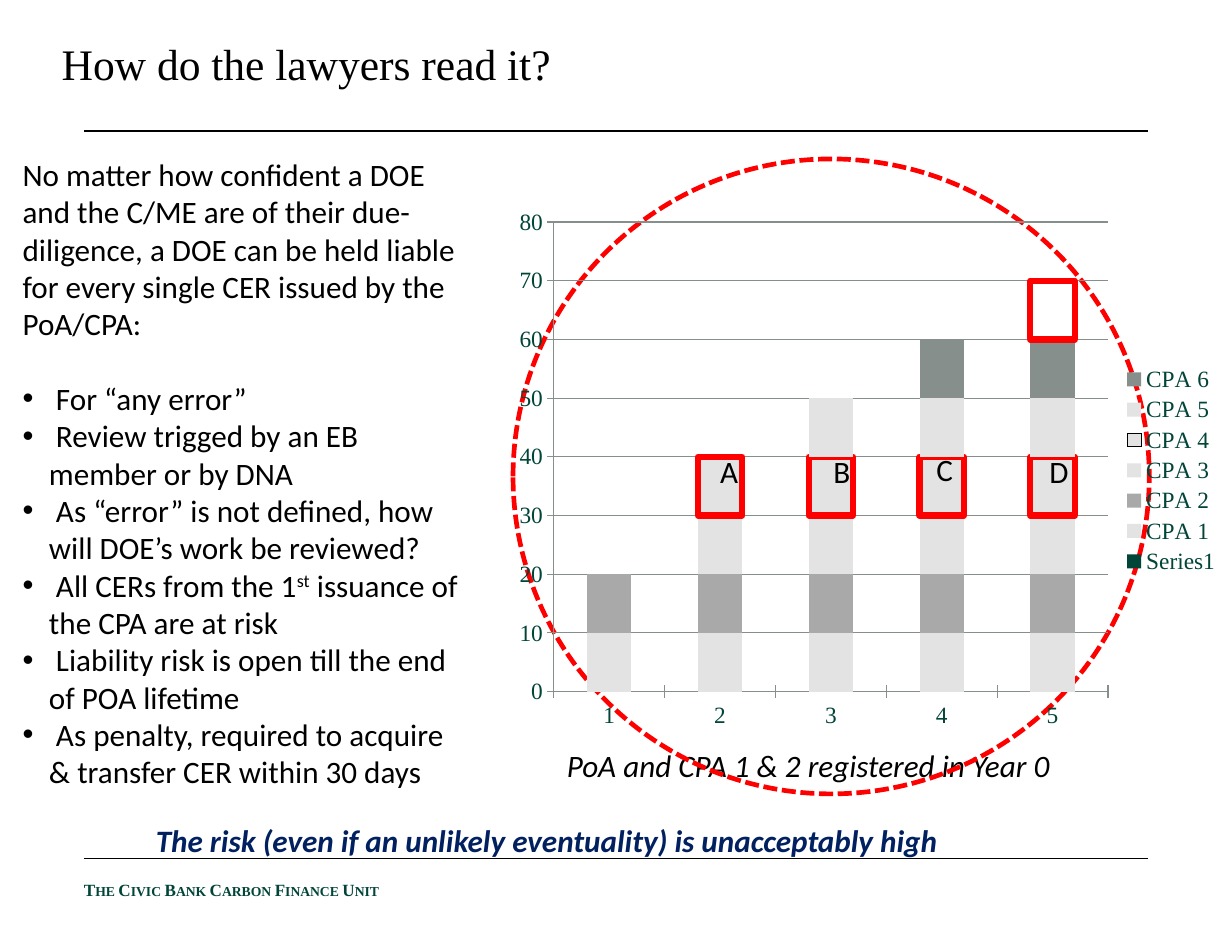
from lxml import etree
from pptx import Presentation
from pptx.chart.data import CategoryChartData
from pptx.dml.color import RGBColor
from pptx.enum.chart import XL_CHART_TYPE, XL_LEGEND_POSITION, XL_TICK_MARK
from pptx.enum.dml import MSO_LINE
from pptx.enum.shapes import MSO_CONNECTOR, MSO_SHAPE
from pptx.enum.text import MSO_ANCHOR, MSO_AUTO_SIZE, PP_ALIGN
from pptx.oxml import parse_xml
from pptx.oxml.ns import nsdecls, qn
from pptx.util import Pt

STACKED = XL_CHART_TYPE.COLUMN_STACKED
RIGHT = XL_LEGEND_POSITION.RIGHT
CROSS = XL_TICK_MARK.CROSS
DASH = MSO_LINE.SQUARE_DOT
STRAIGHT = MSO_CONNECTOR.STRAIGHT
OVAL = MSO_SHAPE.OVAL
TOP, MIDDLE, BOTTOM = MSO_ANCHOR.TOP, MSO_ANCHOR.MIDDLE, MSO_ANCHOR.BOTTOM
NO_FIT = MSO_AUTO_SIZE.NONE
LEFT = PP_ALIGN.LEFT

BLACK = RGBColor(0, 0, 0)
WHITE = RGBColor(255, 255, 255)
RED = RGBColor(255, 0, 0)
NAVY = RGBColor(0x00, 0x20, 0x60)
GREEN = RGBColor(0x00, 0x45, 0x38)
PALE = RGBColor(0xE3, 0xE3, 0xE3)
GREY = RGBColor(0xA9, 0xA9, 0xA9)
SAGE = RGBColor(0x86, 0x8F, 0x8B)

SERIF = {"name": "Times New Roman"}
SANS = {"name": "Calibri", "size": Pt(20)}
INSET = (8, 4, 8, 4)
HANG = 17

INTRO = ("No matter how confident a DOE and the C/ME are of their due-diligence, "
         "a DOE can be held liable for every single CER issued by the PoA/CPA:")
RISKS = [
    " For “any error”",
    " Review trigged by an EB member or by DNA",
    " As “error” is not defined, how will DOE’s work be reviewed?",
    " All CERs from the 1^st^ issuance of the CPA are at risk",
    " Liability risk is open till the end of POA lifetime",
    " As penalty, required to acquire & transfer CER within 30 days",
]
YEARS = ["1", "2", "3", "4", "5"]
STACKS = [
    ("Series1", 5, GREEN),
    ("CPA 1", 0, PALE),
    ("CPA 2", 0, GREY),
    ("CPA 3", 1, PALE),
    ("CPA 4", 1, PALE),
    ("CPA 5", 2, PALE),
    ("CPA 6", 3, SAGE),
    ("Series 8", 4, WHITE),
]
FRAMED = ("CPA 4", "Series 8")
MARKS = [("A", 455, 286.6, 26.6), ("B", 527.8, 286.6, 26.6),
         ("C", 594, 285.8, 19.4), ("D", 666.7, 286.6, 26.6)]


class Deck:
    def __init__(self):
        self.show = Presentation()
        self.show.slide_width, self.show.slide_height = Pt(792), Pt(612)
        self.slide = self.show.slides.add_slide(self.show.slide_layouts[1])
        self.shapes = self.slide.shapes

    def style(self, font, looks, color):
        for key, value in looks.items():
            setattr(font, key, value)
        font.color.rgb = color

    def frame(self, shape, box, inset=INSET, anchor=TOP):
        shape.left, shape.top, shape.width, shape.height = map(Pt, box)
        frame = shape.text_frame
        sides = ("left", "top", "right", "bottom")
        looks = {f"margin_{side}": Pt(gap) for side, gap in zip(sides, inset)}
        looks.update(word_wrap=True, auto_size=NO_FIT, vertical_anchor=anchor)
        for key, value in looks.items():
            setattr(frame, key, value)
        return frame

    def phrase(self, para, text, looks, color):
        para.alignment = LEFT
        for spot, part in enumerate(text.split("^")):
            run = para.add_run()
            run.text = part
            self.style(run.font, looks, color)
            if spot % 2:
                run.font._element.set("baseline", "30000")

    def title(self, text, box):
        frame = self.frame(self.shapes.title, box, (0, 4, 0, 4), BOTTOM)
        self.phrase(frame.paragraphs[0], text, {**SERIF, "size": Pt(28)}, BLACK)

    def list(self, intro, items, box):
        frame = self.frame(self.slide.placeholders[1], box)
        for spot, text in enumerate([intro] + items):
            para = frame.add_paragraph() if spot else frame.paragraphs[0]
            props = para._p.get_or_add_pPr()
            hang = Pt(HANG) if spot else 0
            props.set("marL", str(hang))
            props.set("indent", str(-hang))
            if spot:
                face = etree.SubElement(props, qn("a:buFont"))
                face.set("typeface", "Arial")
                etree.SubElement(props, qn("a:buChar")).set("char", "•")
            else:
                etree.SubElement(props, qn("a:buNone"))
            para.space_before = Pt(24 if spot == 1 else 0)
            self.phrase(para, text, SANS, BLACK)

    def text(self, text, box, looks=SANS, color=BLACK, inset=INSET, anchor=TOP):
        shape = self.shapes.add_textbox(*map(Pt, box))
        para = self.frame(shape, box, inset, anchor).paragraphs[0]
        self.phrase(para, text, looks, color)
        return para

    def rule(self, y):
        line = self.shapes.add_connector(STRAIGHT, Pt(54), Pt(y), Pt(738), Pt(y))
        self.edge(line.line, BLACK, 0.75)
        etree.SubElement(line._element.spPr, qn("a:effectLst"))

    def edge(self, line, color, width):
        line.color.rgb = color
        line.width = Pt(width)

    def ring(self, box):
        ring = self.shapes.add_shape(OVAL, *map(Pt, box))
        ring.shadow.inherit = False
        ring.fill.background()
        self.edge(ring.line, RED, 3)
        ring.line.dash_style = DASH

    def chart(self, box):
        data = CategoryChartData()
        data.categories = YEARS
        for name, start, _ in STACKS:
            data.add_series(name, [None] * start + [10] * (5 - start))
        chart = self.shapes.add_chart(STACKED, *map(Pt, box), data).chart
        self.style(chart.font, {**SERIF, "size": Pt(15)}, GREEN)
        chart.has_title = False
        chart.has_legend = True
        chart.legend.position = RIGHT
        chart.legend.include_in_layout = False
        chart.legend._element.insert(1, parse_xml(
            f'<c:legendEntry {nsdecls("c")}><c:idx val="7"/>'
            '<c:delete val="1"/></c:legendEntry>'))
        plot = chart.plots[0]
        for key, value in {"gap_width": 150, "overlap": 100,
                           "vary_by_categories": False}.items():
            setattr(plot, key, value)
        for bars, (name, start, color) in zip(plot.series, STACKS):
            bars.format.fill.solid()
            bars.format.fill.fore_color.rgb = color
            if name in FRAMED:
                self.edge(bars.format.line, BLACK, 0.75)
                for spot in range(start, 5):
                    look = bars.points[spot].format
                    look.fill.solid()
                    look.fill.fore_color.rgb = color
                    self.edge(look.line, RED, 4)
        scale = chart.value_axis
        for key, value in {"minimum_scale": 0, "maximum_scale": 80, "major_unit": 10,
                           "has_major_gridlines": True}.items():
            setattr(scale, key, value)
        self.edge(scale.major_gridlines.format.line, SAGE, 0.75)
        for axis in (scale, chart.category_axis):
            axis.major_tick_mark = CROSS
            self.edge(axis.format.line, SAGE, 0.75)
        area = chart._chartSpace.chart.plotArea
        for old in area.findall(qn("c:layout")):
            area.remove(old)
        spots = {"x": 0.07, "y": 0.04, "w": 0.76, "h": 0.87}
        inner = "".join(f'<c:{key} val="{value}"/>' for key, value in spots.items())
        area.insert(0, parse_xml(
            f'<c:layout {nsdecls("c")}><c:manualLayout><c:layoutTarget val="inner"/>'
            f'<c:xMode val="edge"/><c:yMode val="edge"/>{inner}'
            '</c:manualLayout></c:layout>'))


def main():
    deck = Deck()
    for y in (552, 84.25):
        deck.rule(y)
    unit = deck.text("The Civic Bank Carbon Finance Unit", (54, 565, 665, 14),
                     {**SERIF, "size": Pt(11), "bold": True}, GREEN,
                     (0, 0, 8, 0), MIDDLE)
    unit.runs[0].font._element.set("cap", "small")
    deck.title("How do the lawyers read it?", (39.6, 20.2, 713, 41))
    deck.list(INTRO, RISKS, (6.5, 95.8, 296.6, 428.4))
    deck.text("PoA and CPA 1 & 2 registered in Year 0", (356.4, 476, 330, 33),
              {**SANS, "italic": True})
    deck.ring((329.8, 102.2, 409, 408.2))
    deck.text("The risk (even if an unlikely eventuality) is unacceptably high",
              (92.2, 524.2, 521.3, 33), {**SANS, "bold": True, "italic": True}, NAVY)
    deck.chart((323.3, 128.9, 468.7, 347))
    for mark, x, y, wide in MARKS:
        deck.text(mark, (x, y, wide, 33))
    deck.show.save("out.pptx")


if __name__ == "__main__":
    main()
